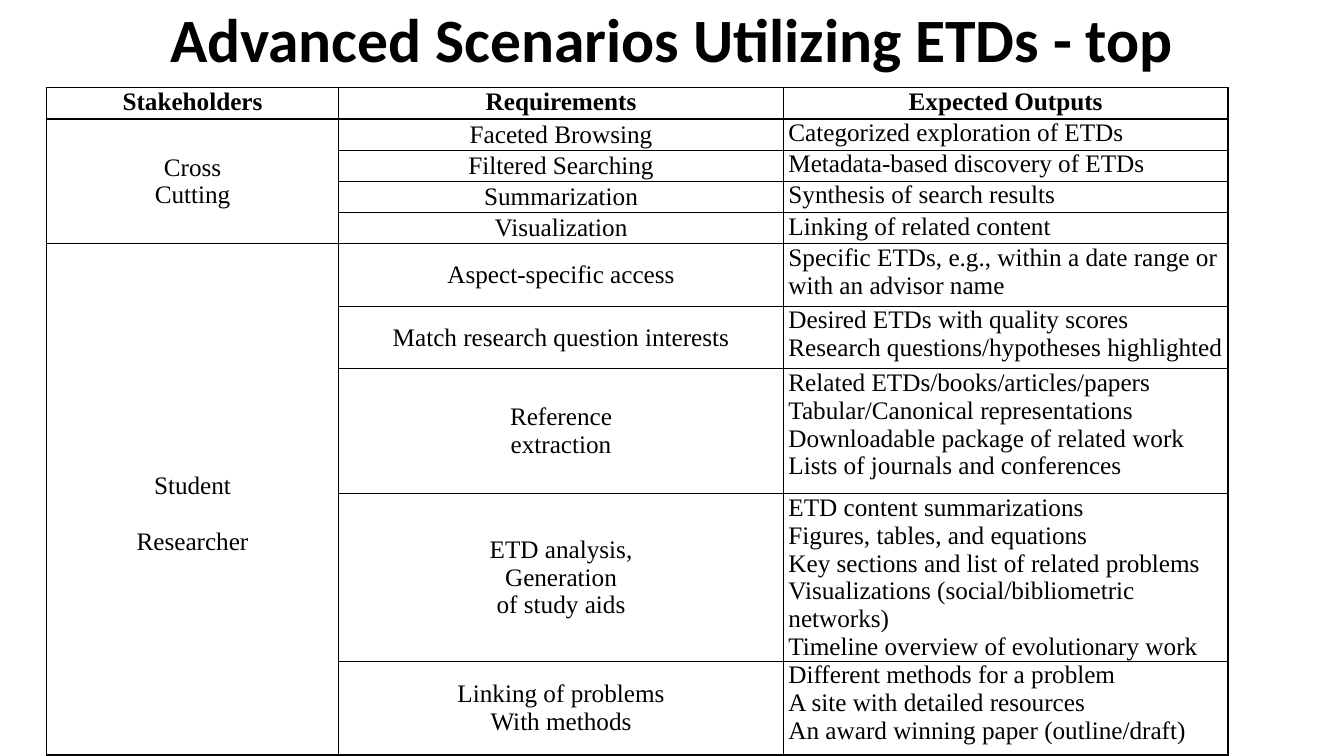
from lxml.etree import SubElement
from pptx import Presentation
from pptx.dml.color import RGBColor
from pptx.enum.text import MSO_ANCHOR, MSO_AUTO_SIZE, PP_ALIGN
from pptx.oxml.ns import qn
from pptx.util import Pt

PX = 9144
BLACK, WHITE = "000000", "FFFFFF"
UNIT = 31
WIDTHS = [290, 441, 441]
HEADS = ["Stakeholders", "Requirements", "Expected Outputs"]
GROUPS = [
    (["Cross", "Cutting"], [
        (1, ["Faceted Browsing"], ["Categorized exploration of ETDs"]),
        (1, ["Filtered Searching"], ["Metadata-based discovery of ETDs"]),
        (1, ["Summarization"], ["Synthesis of search results"]),
        (1, ["Visualization"], ["Linking of related content"]),
    ]),
    (["Student", "Researcher"], [
        (2, ["Aspect-specific access"],
         ["Specific ETDs, e.g., within a date range or with an advisor name"]),
        (2, ["Match research question interests"],
         ["Desired ETDs with quality scores",
          "Research questions/hypotheses highlighted"]),
        (4, ["Reference", "extraction"],
         ["Related ETDs/books/articles/papers",
          "Tabular/Canonical representations",
          "Downloadable package of related work",
          "Lists of journals and conferences"]),
        (5, ["ETD analysis,", "Generation", "of study aids"],
         ["ETD content summarizations",
          "Figures, tables, and equations",
          "Key sections and list of related problems",
          "Visualizations (social/bibliometric networks)",
          "Timeline overview of evolutionary work"]),
        (3, ["Linking of problems", "With methods"],
         ["Different methods for a problem",
          "A site with detailed resources",
          "An award winning paper (outline/draft)"]),
    ]),
]


def color(code):
    return RGBColor.from_string(code)


def style(para, face, size, bold, align):
    para.alignment = align
    font = para.font
    font.name, font.size, font.bold = face, Pt(size), bold
    font.color.rgb = color(BLACK)


def place(shape, left, top, width, height):
    shape.left, shape.top = left * PX, top * PX
    shape.width, shape.height = width * PX, height * PX


def add_title(slide, text):
    title = slide.shapes.title
    place(title, 92, 0, 1150, 84)
    frame = title.text_frame
    frame.text = text
    frame.word_wrap = True
    frame.auto_size = MSO_AUTO_SIZE.NONE
    frame.vertical_anchor = MSO_ANCHOR.MIDDLE
    para = frame.paragraphs[0]
    para.line_spacing = 0.9
    style(para, "Calibri", 44, True, PP_ALIGN.CENTER)


def frame_cell(cell):
    cell.fill.solid()
    cell.fill.fore_color.rgb = color(WHITE)
    props = cell._tc.get_or_add_tcPr()
    for spot, side in enumerate(["lnL", "lnR", "lnT", "lnB"]):
        line = SubElement(props, qn("a:" + side), w=str(Pt(1)))
        fill = SubElement(line, qn("a:solidFill"))
        SubElement(fill, qn("a:srgbClr"), val=BLACK)
        props.insert(spot, line)


def fill_cell(cell, lines, bold=False, align=PP_ALIGN.CENTER,
              anchor=MSO_ANCHOR.MIDDLE):
    cell.text = "\n".join(lines)
    cell.vertical_anchor = anchor
    for para in cell.text_frame.paragraphs:
        style(para, "Times New Roman", 18, bold, align)


def add_grid(slide):
    units = [1] + [row[0] for _, rows in GROUPS for row in rows]
    shape = slide.shapes.add_table(
        len(units), len(WIDTHS), 46 * PX, 87 * PX,
        sum(WIDTHS) * PX, sum(units) * UNIT * PX)
    table = shape.table
    for column, width in zip(table.columns, WIDTHS):
        column.width = width * PX
    for row, count in zip(table.rows, units):
        row.height = count * UNIT * PX
    for cell in table.iter_cells():
        frame_cell(cell)
        cell.margin_left = cell.margin_right = 5 * PX
        cell.margin_top = cell.margin_bottom = 0
    for col, head in enumerate(HEADS):
        fill_cell(table.cell(0, col), [head], True, anchor=MSO_ANCHOR.TOP)
    top = 1
    for names, rows in GROUPS:
        group = table.cell(top, 0)
        group.merge(table.cell(top + len(rows) - 1, 0))
        fill_cell(group, names)
        for index, (_, needs, gains) in enumerate(rows, top):
            fill_cell(table.cell(index, 1), needs)
            fill_cell(table.cell(index, 2), gains,
                      align=PP_ALIGN.LEFT, anchor=MSO_ANCHOR.TOP)
        top += len(rows)
    group.margin_top = 28 * PX
    group.text_frame.paragraphs[1].space_before = Pt(20)


def main():
    deck = Presentation()
    deck.slide_width, deck.slide_height = 1333 * PX, 750 * PX
    slide = deck.slides.add_slide(deck.slide_layouts[5])
    add_title(slide, "Advanced Scenarios Utilizing ETDs - top")
    add_grid(slide)
    deck.save("out.pptx")


if __name__ == "__main__":
    main()
